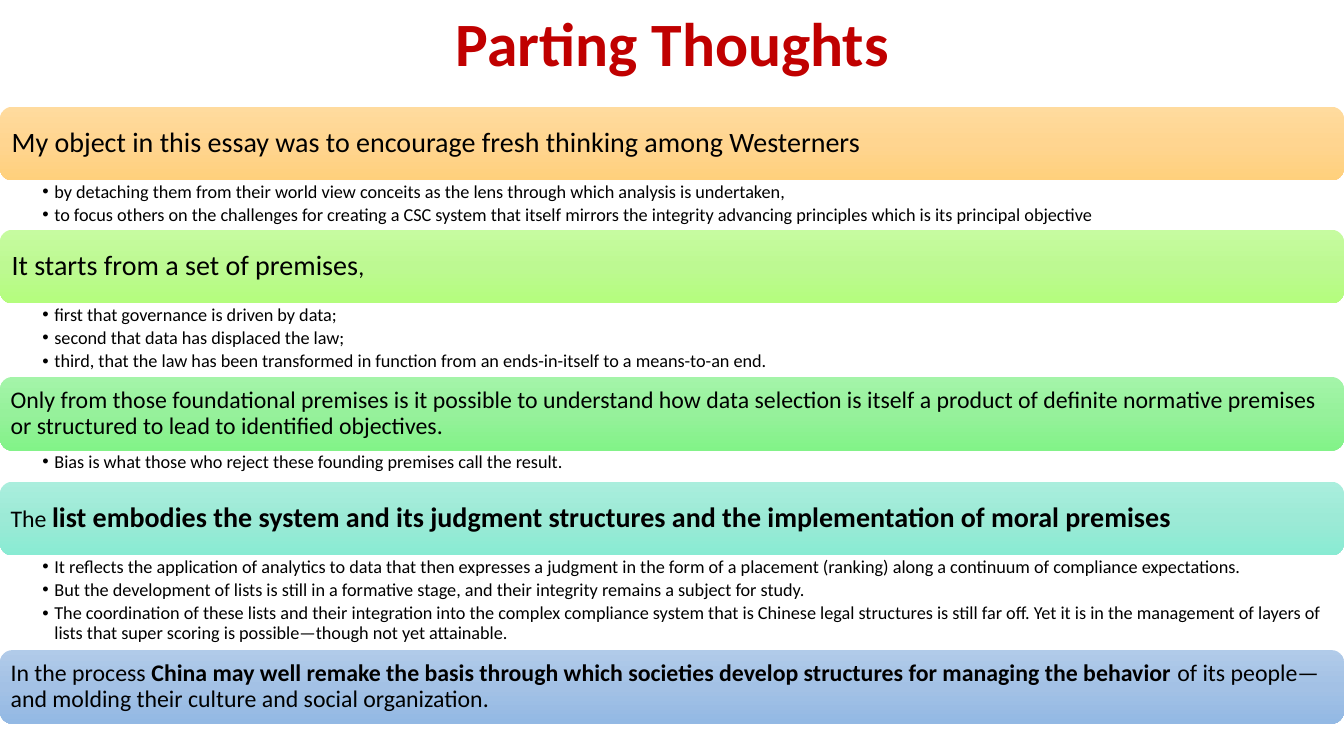
from copy import deepcopy

from lxml import etree
from pptx import Presentation, util as u
from pptx.dml.color import RGBColor
from pptx.enum import shapes, text
from pptx.oxml import ns

WIDE, HIGH = u.Inches(13.33), u.Inches(7.5)
BAND = u.Inches(0.73)
TOP = u.Inches(1.06)

# Each part: gradient, heading runs (text, size, bold), list height, list items
PARTS = [
    (("FFDB9E", "FFD590", "FFD07C"),
     [("My object in this essay was to encourage fresh thinking among Westerners", 20, False)],
     0.49,
     ["by detaching them from their world view conceits as the lens through which analysis is undertaken,",
      "to focus others on the challenges for creating a CSC system that itself mirrors the integrity "
      "advancing principles which is its principal objective"]),
    (("C6FBA0", "BDF992", "B4FD7D"),
     [("It starts from a set of premises", 20, False), (",", 17, False)],
     0.73,
     ["first that governance is driven by data;",
      "second that data has displaced the law;",
      "third, that the law has been transformed in function from an ends-in-itself to a means-to-an end."]),
    (("A4F4A9", "96F19B", "82F388"),
     [("Only from those foundational premises is it possible to understand how data selection is itself "
       "a product of definite normative premises or structured to lead to identified objectives.", 17, False)],
     0.31,
     ["Bias is what those who reject these founding premises call the result."]),
    (("AAEEDD", "9CEAD6", "89EBD3"),
     [("The ", 17, False),
      ("list embodies the system and its judgment structures and the implementation of moral premises",
       20, True)],
     0.94,
     ["It reflects the application of analytics to data that then expresses a judgment in the form of a "
      "placement (ranking) along a continuum of compliance expectations.",
      "But the development of lists is still in a formative stage, and their integrity remains a subject "
      "for study.",
      "The coordination of these lists and their integration into the complex compliance system that is "
      "Chinese legal structures is still far off. Yet it is in the management of layers of lists that "
      "super scoring is possible—though not yet attainable."]),
    (("B1CBE9", "A3C1E5", "93B9E4"),
     [("In the process ", 17, False),
      ("China may well remake the basis through which societies develop structures for managing the "
       "behavior ", 17, True),
      ("of its people—and molding their culture and social organization.", 17, False)],
     0, []),
]


def color(code):
    return RGBColor.from_string(code)


def write(para, runs, tint="000000", align=text.PP_ALIGN.LEFT):
    """Fill a paragraph with runs of (text, size, bold)."""
    para.alignment, para.line_spacing = align, 0.9
    for words, size, bold in runs:
        run = para.add_run()
        run.text = words
        for name, value in dict(name="Calibri", size=u.Pt(size), bold=bold).items():
            setattr(run.font, name, value)
        run.font.color.rgb = color(tint)


deck = Presentation()
deck.slide_width, deck.slide_height = WIDE, HIGH
slide = deck.slides.add_slide(deck.slide_layouts[6])

title = slide.shapes.add_textbox(u.Inches(0.92), 0, u.Inches(11.5), u.Inches(0.93)).text_frame
title.word_wrap, title.vertical_anchor = True, text.MSO_ANCHOR.MIDDLE
write(title.paragraphs[0], [("Parting Thoughts", 44, True)], "C00000", text.PP_ALIGN.CENTER)

y = TOP
for shades, head, tall, items in PARTS:
    band = slide.shapes.add_shape(shapes.MSO_SHAPE.ROUNDED_RECTANGLE, 0, y, WIDE, BAND)
    band.shadow.inherit = False
    band.line.fill.background()
    band.fill.gradient()
    band.fill.gradient_angle = 270
    stops = band.element.find(".//" + ns.qn("a:gsLst"))
    stops.insert(1, deepcopy(stops[0]))
    for place, (stop, shade) in enumerate(zip(band.fill.gradient_stops, shades)):
        stop.position, stop.color.rgb = place / 2, color(shade)

    frame = band.text_frame
    frame.word_wrap, frame.vertical_anchor = True, text.MSO_ANCHOR.MIDDLE
    pad = u.Inches(0.08 if head[0][1] == 20 else 0.07)
    for side in ("left", "top", "right", "bottom"):
        setattr(frame, "margin_" + side, pad)
    write(frame.paragraphs[0], head)
    y += BAND

    if items:
        body = slide.shapes.add_textbox(0, y, WIDE, u.Inches(tall)).text_frame
        body.word_wrap = True
        for side, inset in dict(left=0.42, top=0.02, right=0.13, bottom=0.02).items():
            setattr(body, "margin_" + side, u.Inches(inset))
        for i, item in enumerate(items):
            para = body.add_paragraph() if i else body.paragraphs[0]
            para.level = 1
            props = para._p.get_or_add_pPr()
            props.set("marL", str(u.Inches(0.12)))
            props.set("indent", str(-u.Inches(0.12)))
            etree.SubElement(props, ns.qn("a:buFont")).set("typeface", "Arial")
            etree.SubElement(props, ns.qn("a:buChar")).set("char", "•")
            para.space_after = u.Pt(2.6)
            write(para, [(item, 13, False)])
        y += u.Inches(tall)

deck.save("out.pptx")
